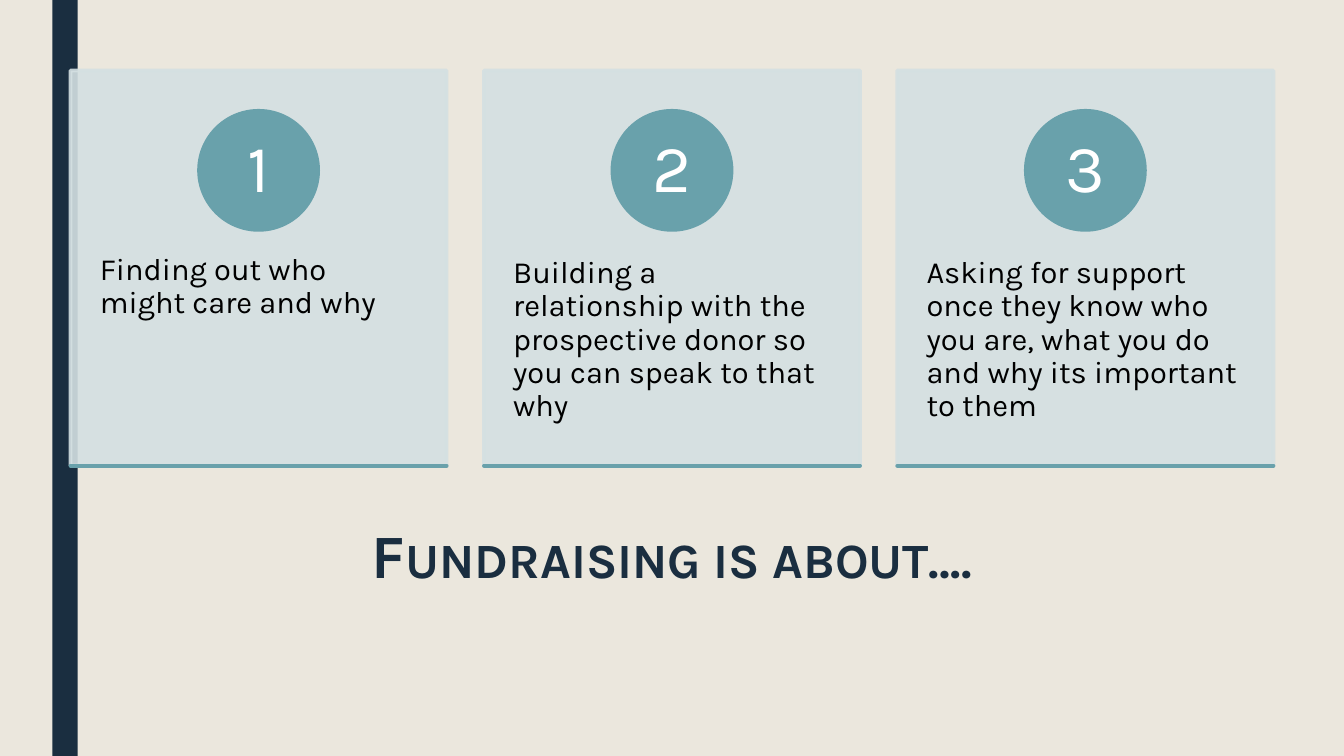
from lxml import etree
from pptx import Presentation
from pptx.dml.color import RGBColor
from pptx.enum.shapes import MSO_CONNECTOR, MSO_SHAPE
from pptx.enum.text import MSO_ANCHOR, PP_ALIGN
from pptx.oxml.ns import qn
from pptx.util import Inches, Pt

RECT, OVAL = MSO_SHAPE.RECTANGLE, MSO_SHAPE.OVAL
STRAIGHT = MSO_CONNECTOR.STRAIGHT
LEFT, CENTER = PP_ALIGN.LEFT, PP_ALIGN.CENTER
TOP, MIDDLE = MSO_ANCHOR.TOP, MSO_ANCHOR.MIDDLE

COLORS = {
    "background": "EBE7DD",
    "navy": "1A2E40",
    "card": "D4E0E2",
    "teal": "69A1AB",
    "black": "000000",
    "white": "FFFFFF",
}
FONT = "Karla"
LINE_WIDTH = 2.75

STEPS = [
    "Finding out who might care and why",
    "Building a relationship with the prospective donor so you can speak to that why",
    "Asking for support once they know who you are, what you do and why its important to them",
]
CARD_LEFT, CARD_TOP = 0.7, 0.7
CARD_WIDTH, CARD_HEIGHT = 3.73, 3.92
CARD_PITCH = 4.1


def rgb(name):
    return RGBColor.from_string(COLORS[name])


def set_alpha(fill_parent, percent):
    """Make the solid fill under an spPr or a:ln element partly transparent."""
    color = fill_parent.find(qn("a:solidFill"))[0]
    etree.SubElement(color, qn("a:alpha"), val=str(percent * 1000))


def add_block(slide, kind, x, y, w, h, color, outlined=True, alpha=None):
    sp = slide.shapes.add_shape(kind, Inches(x), Inches(y), Inches(w), Inches(h))
    sp.shadow.inherit = False
    sp.fill.solid()
    sp.fill.fore_color.rgb = rgb(color)
    if outlined:
        sp.line.color.rgb = rgb(color)
        sp.line.width = Pt(LINE_WIDTH)
    else:
        sp.line.fill.background()
    if alpha:
        sp_pr = sp.fill._xPr
        set_alpha(sp_pr, alpha)
        set_alpha(sp_pr.find(qn("a:ln")), alpha)
    return sp


def add_text(slide, text, x, y, w, h, size, color, align=LEFT, anchor=TOP,
             inset=(0.1, 0.05), spacing=0.9, bold=False, small_caps=False):
    box = slide.shapes.add_textbox(Inches(x), Inches(y), Inches(w), Inches(h))
    tf = box.text_frame
    tf.word_wrap = True
    tf.vertical_anchor = anchor
    tf.margin_left = tf.margin_right = Inches(inset[0])
    tf.margin_top = tf.margin_bottom = Inches(inset[1])
    p = tf.paragraphs[0]
    p.alignment = align
    p.line_spacing = spacing
    r = p.add_run()
    r.text = text
    r.font.name = FONT
    r.font.size = Pt(size)
    r.font.bold = bold
    r.font.color.rgb = rgb(color)
    if small_caps:
        r.font._element.set("cap", "small")


def add_base_line(slide, x, y, w):
    line = slide.shapes.add_connector(
        STRAIGHT, Inches(x), Inches(y), Inches(x + w), Inches(y))
    line.line.color.rgb = rgb("teal")
    line.line.width = Pt(LINE_WIDTH)
    line.line._ln.set("cap", "rnd")
    etree.SubElement(line._element.spPr, qn("a:effectLst"))


def add_card(slide, number, text, x, y, w, h):
    """Draw one numbered step: panel, text, circle with number, base line."""
    circle, label = 1.18, 0.83
    circle_y = y + 0.4
    add_block(slide, RECT, x, y, w, h, "card", alpha=90)
    add_text(slide, text, x, y + 1.49, w, 2.35, 22, "black", inset=(0.29, 0.36))
    add_block(slide, OVAL, x + (w - circle) / 2, circle_y, circle, circle, "teal")
    add_text(slide, str(number), x + (w - label) / 2,
             circle_y + (circle - label) / 2, label, label, 48, "white",
             align=CENTER, anchor=MIDDLE, inset=(0.09, 0.01))
    add_base_line(slide, x, y + h, w)


def add_side_bar(slide, x, w, h):
    add_block(slide, RECT, x, 0, w, h, "navy", outlined=False)


def add_title(slide, text, x, y, w, h):
    add_text(slide, text, x, y, w, h, 44, "navy", align=CENTER,
             spacing=0.89, bold=True, small_caps=True)


def main():
    prs = Presentation()
    prs.slide_width, prs.slide_height = Inches(13.33), Inches(7.5)
    slide = prs.slides.add_slide(prs.slide_layouts[6])
    slide.background.fill.solid()
    slide.background.fill.fore_color.rgb = rgb("background")

    add_side_bar(slide, 0.52, 0.25, 7.5)
    add_title(slide, "Fundraising is about….", CARD_LEFT, 5.17, 11.93, 1.62)
    for i, text in enumerate(STEPS):
        add_card(slide, i + 1, text, CARD_LEFT + i * CARD_PITCH, CARD_TOP,
                 CARD_WIDTH, CARD_HEIGHT)
    prs.save("out.pptx")


if __name__ == "__main__":
    main()
